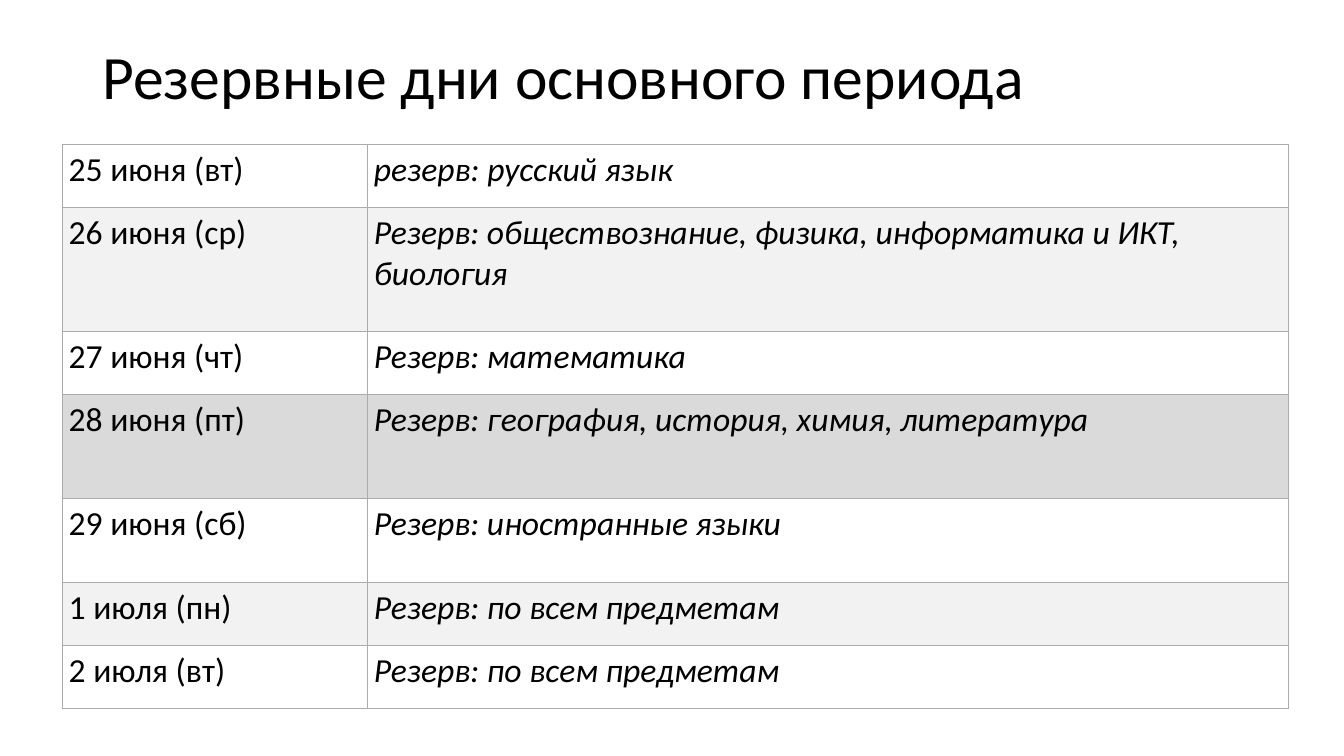
"""Build a slide with the reserve exam days of the main period."""
from lxml import etree
from pptx import Presentation
from pptx.dml.color import RGBColor
from pptx.enum import text
from pptx.oxml import ns
from pptx.util import Pt


def rgb(value):
    return RGBColor.from_string(value)


class Deck:
    font = "Calibri"
    ink = "000000"
    border = "A9ABAD"
    border_width = 0.75

    def __init__(self, width, height):
        self.prs = Presentation()
        self.prs.slide_width, self.prs.slide_height = Pt(width), Pt(height)
        self.s = self.prs.slides.add_slide(self.prs.slide_layouts[6])

    def set_text(self, tf, content, size, italic=False):
        tf.text = content
        p = tf.paragraphs[0]
        for r in p.runs:
            r.font.name = self.font
            r.font.size = Pt(size)
            r.font.italic = italic
            r.font.color.rgb = rgb(self.ink)
        return p

    def title(self, content, left, top, width, height):
        sp = self.s.shapes.add_textbox(Pt(left), Pt(top), Pt(width), Pt(height))
        tf = sp.text_frame
        tf.word_wrap = True
        tf.vertical_anchor = text.MSO_ANCHOR.MIDDLE
        p = self.set_text(tf, content, 44)
        p.line_spacing = 0.9

    def outline(self, cell):
        tc_pr = cell._tc.get_or_add_tcPr()
        for side in ("lnL", "lnR", "lnT", "lnB"):
            ln = etree.SubElement(tc_pr, ns.qn(f"a:{side}"), w=str(Pt(self.border_width)))
            fill = etree.SubElement(ln, ns.qn("a:solidFill"))
            etree.SubElement(fill, ns.qn("a:srgbClr"), val=self.border)

    def cell(self, cell, content, fill, italic):
        self.outline(cell)
        cell.fill.solid()
        cell.fill.fore_color.rgb = rgb(fill)
        cell.margin_left = cell.margin_right = Pt(4.5)
        cell.margin_top = cell.margin_bottom = Pt(3.6)
        self.set_text(cell.text_frame, content, 24, italic)

    def table(self, rows, left, top, widths):
        height = sum(row[0] for row in rows)
        frame = self.s.shapes.add_table(
            len(rows), len(widths), Pt(left), Pt(top), Pt(sum(widths)), Pt(height))
        table = frame.table
        for column, width in zip(table.columns, widths):
            column.width = Pt(width)
        for i, (row_height, fill, day, subjects) in enumerate(rows):
            table.rows[i].height = Pt(row_height)
            self.cell(table.cell(i, 0), day, fill, False)
            self.cell(table.cell(i, 1), subjects, fill, True)

    def save(self):
        self.prs.save("out.pptx")


def main():
    white, light, grey = "FFFFFF", "F2F2F2", "DADADA"
    days = [
        (45.2, white, "25 июня (вт)", "резерв: русский язык"),
        (88.6, light, "26 июня (ср)",
         "Резерв: обществознание, физика, информатика и ИКТ, биология"),
        (45.2, white, "27 июня (чт)", "Резерв: математика"),
        (74, grey, "28 июня (пт)", "Резерв: география, история, химия, литература"),
        (60, white, "29 июня (сб)", "Резерв: иностранные языки"),
        (45.2, light, "1 июля (пн)", "Резерв: по всем предметам"),
        (45.2, white, "2 июля (вт)", "Резерв: по всем предметам"),
    ]
    deck = Deck(960, 540)
    deck.title("Резервные дни основного периода", 66, 20, 828, 73.5)
    deck.table(days, 44.6, 103, [218, 657.5])
    deck.save()


if __name__ == "__main__":
    main()
